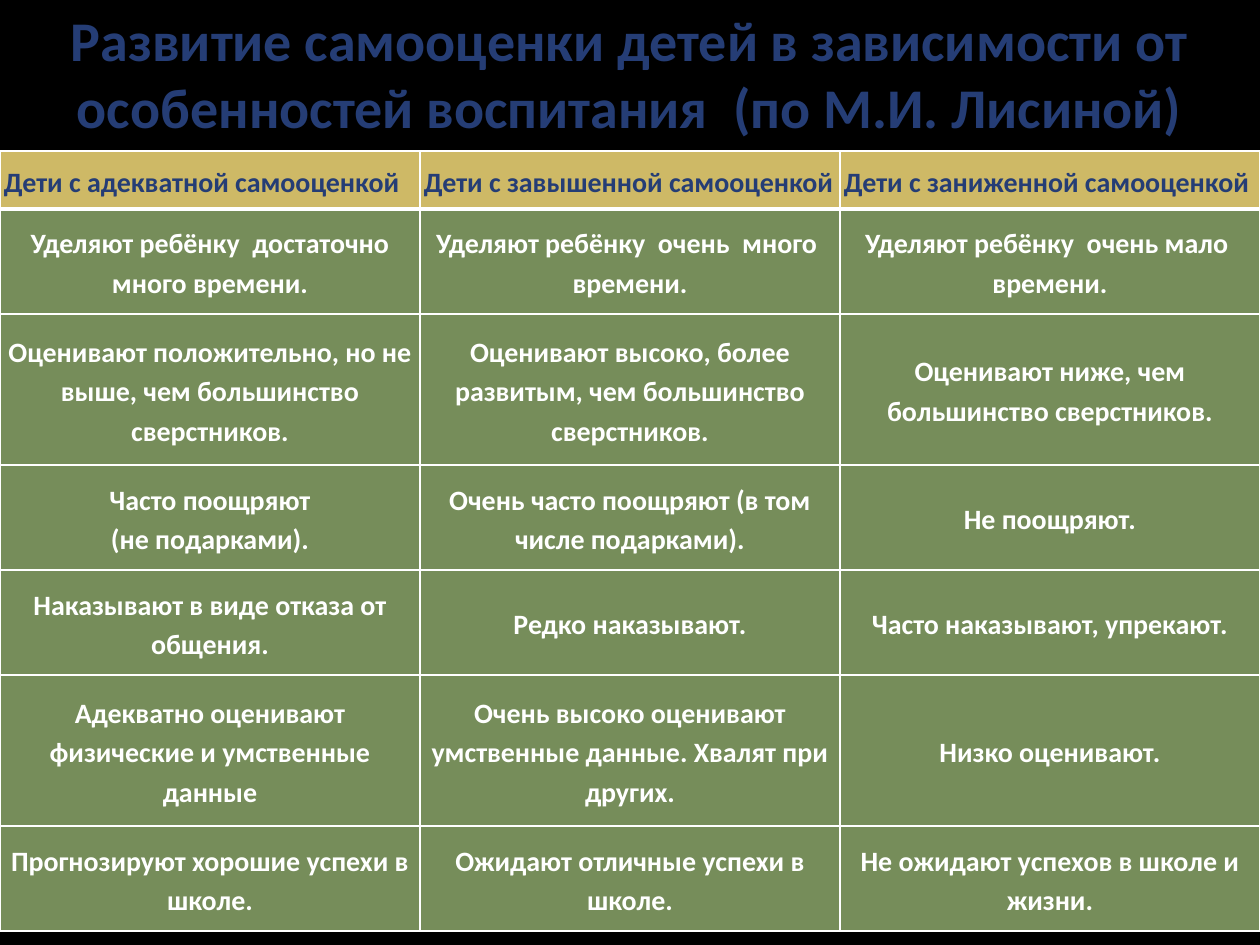
import pptx
import pptx.util
import pptx.dml.color
import pptx.enum.text
import pptx.oxml
import pptx.oxml.ns

Pt = pptx.util.Pt
ALIGN = pptx.enum.text.PP_ALIGN
MIDDLE = pptx.enum.text.MSO_ANCHOR.MIDDLE
NAVY, GOLD, GREEN, WHITE, BLACK = "253D75", "CEB966", "768D5A", "FFFFFF", "000000"

TITLE = "Развитие самооценки детей в зависимости от особенностей воспитания  (по М.И. Лисиной)"
ROWS = [
    (33, ["Дети с адекватной самооценкой",
          "Дети с завышенной самооценкой",
          "Дети с заниженной самооценкой"]),
    (60, ["Уделяют ребёнку  достаточно много времени.",
          "Уделяют ребёнку  очень  много  времени.",
          "Уделяют ребёнку  очень мало  времени."]),
    (86.4, ["Оценивают положительно, но не выше, чем большинство сверстников.",
            "Оценивают высоко, более развитым, чем большинство сверстников.",
            "Оценивают ниже, чем большинство сверстников."]),
    (60, ["Часто поощряют\n(не подарками).",
          "Очень часто поощряют (в том числе подарками).",
          "Не поощряют."]),
    (60, ["Наказывают в виде отказа от общения.",
          "Редко наказывают.",
          "Часто наказывают, упрекают."]),
    (86.4, ["Адекватно оценивают физические и умственные данные",
            "Очень высоко оценивают умственные данные. Хвалят при других.",
            "Низко оценивают."]),
    (60, ["Прогнозируют хорошие успехи в школе.",
          "Ожидают отличные успехи в школе.",
          "Не ожидают успехов в школе и жизни."]),
]


def paint(fill, color):
    fill.solid()
    fill.fore_color.rgb = pptx.dml.color.RGBColor.from_string(color)


def style(frame, size, color, align, space):
    for para in frame.paragraphs:
        para.alignment = align
        para.line_spacing = space
        for run in para.runs:
            font = run.font
            font.name, font.size, font.bold = "Calibri", Pt(size), True
            paint(font.fill, color)


def edge(cell, side, width):
    cell._tc.get_or_add_tcPr().append(pptx.oxml.parse_xml(
        f'<a:ln{side} {pptx.oxml.ns.nsdecls("a")} w="{Pt(width)}">'
        f'<a:solidFill><a:srgbClr val="{WHITE}"/></a:solidFill></a:ln{side}>'))


def add_title(slide):
    title = slide.shapes.title
    title.left, title.top, title.width, title.height = 0, 0, Pt(720), Pt(82.8)
    frame = title.text_frame
    frame.text = TITLE
    frame.word_wrap = True
    frame.vertical_anchor = MIDDLE
    style(frame, 32, NAVY, ALIGN.CENTER, 1)


def add_grid(slide):
    total = sum(height for height, _ in ROWS)
    table = slide.shapes.add_table(
        len(ROWS), 3, 0, Pt(86.4), Pt(720), Pt(total)).table
    for col in table.columns:
        col.width = Pt(240)
    for r, (height, texts) in enumerate(ROWS):
        table.rows[r].height = Pt(height)
        for c, text in enumerate(texts):
            cell = table.cell(r, c)
            cell.text = text
            cell.vertical_anchor = MIDDLE
            cell.margin_left = cell.margin_right = Pt(2.2)
            cell.margin_top = cell.margin_bottom = Pt(2.2)
            edge(cell, "L", 1)
            edge(cell, "R", 1)
            edge(cell, "T", 3 if r == 1 else 1)
            edge(cell, "B", 3 if r == 0 else 1)
            paint(cell.fill, GREEN if r else GOLD)
            style(cell.text_frame, 16, WHITE if r else NAVY,
                  ALIGN.CENTER if r else ALIGN.JUSTIFY, 1.15)


def main():
    deck = pptx.Presentation()
    deck.slide_width, deck.slide_height = Pt(720), Pt(540)
    slide = deck.slides.add_slide(deck.slide_layouts[5])
    paint(slide.background.fill, BLACK)
    add_title(slide)
    add_grid(slide)
    deck.save("out.pptx")


if __name__ == "__main__":
    main()
